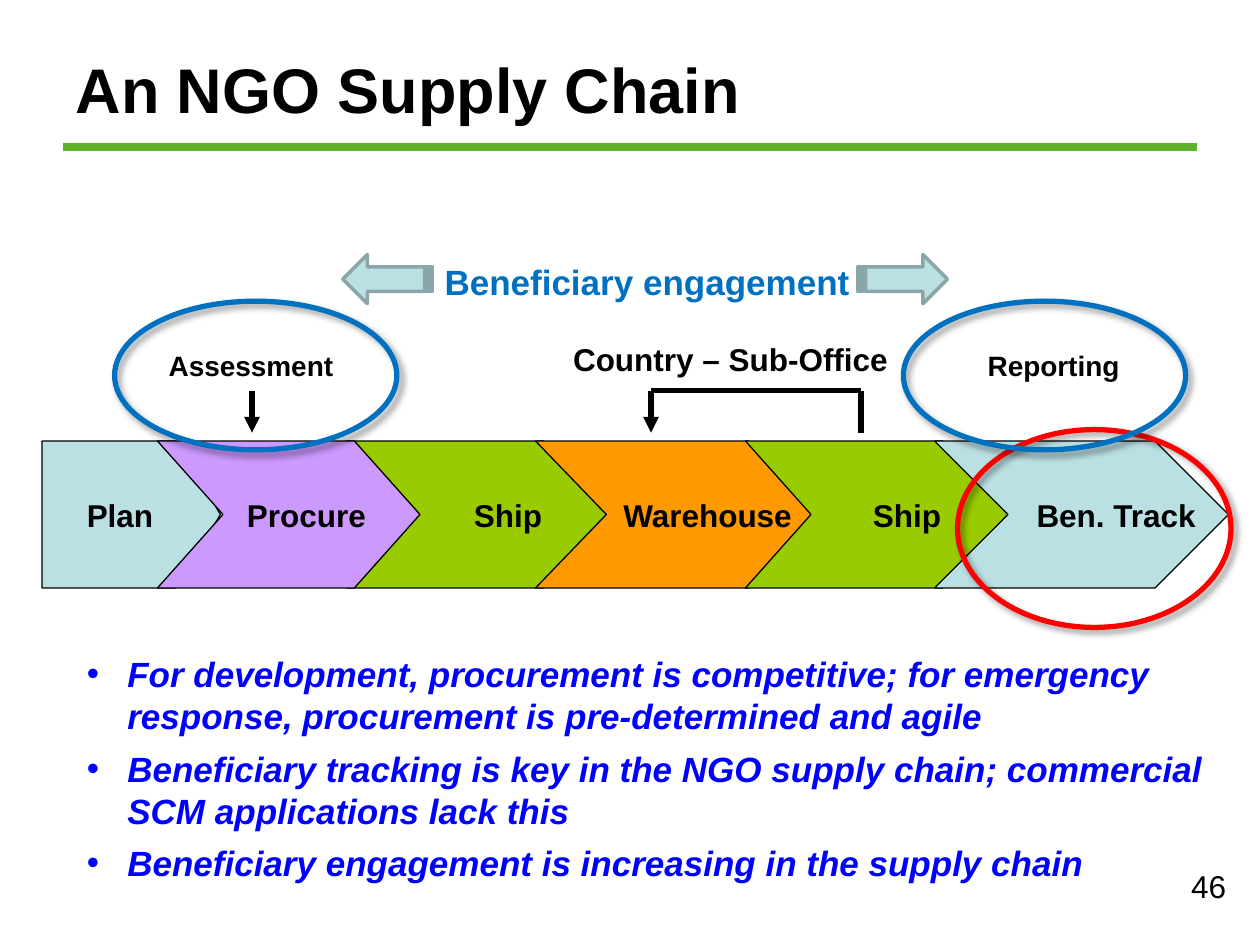
from lxml import etree
from pptx import Presentation
from pptx.dml.color import RGBColor
from pptx.enum.shapes import MSO_CONNECTOR, MSO_SHAPE
from pptx.enum.text import MSO_ANCHOR, MSO_AUTO_SIZE, PP_ALIGN
from pptx.oxml import parse_xml
from pptx.oxml.ns import nsdecls, qn
from pptx.util import Inches, Pt

STRAIGHT = MSO_CONNECTOR.STRAIGHT
CHEVRON, PENTAGON = MSO_SHAPE.CHEVRON, MSO_SHAPE.PENTAGON
OVAL, STRIPED_ARROW = MSO_SHAPE.OVAL, MSO_SHAPE.STRIPED_RIGHT_ARROW
TOP, MIDDLE = MSO_ANCHOR.TOP, MSO_ANCHOR.MIDDLE
LEFT, CENTER, RIGHT = PP_ALIGN.LEFT, PP_ALIGN.CENTER, PP_ALIGN.RIGHT
NO_AUTOFIT = MSO_AUTO_SIZE.NONE

COLORS = {name: RGBColor.from_string(value) for name, value in {
    "black": "000000", "rule": "5FB12B", "list": "0000FF", "blue": "0070C0",
    "red": "FF0000", "pale": "BBE0E3", "pale edge": "8AA6A8",
    "green": "99CC00", "orange": "FF9900", "purple": "CC99FF"}.items()}

presentation = Presentation()
presentation.slide_width, presentation.slide_height = Inches(10), Inches(7.5)
slide = presentation.slides.add_slide(presentation.slide_layouts[1])
column = presentation.slide_width / 120
row = presentation.slide_height / 90


def write(paragraph, text, size, color="black", bold=True, italic=False, align=LEFT):
    paragraph.alignment = align
    run = paragraph.add_run()
    run.text = text
    run.font.name, run.font.size = "Arial", Pt(size)
    run.font.bold, run.font.italic = bold, italic
    run.font.color.rgb = COLORS[color]


def draw_line(start, end, color, width, arrow_at_start=False):
    points = [round(value) for x, y in (start, end) for value in (x * column, y * row)]
    connector = slide.shapes.add_connector(STRAIGHT, *points)
    connector.line.color.rgb = COLORS[color]
    connector.line.width = Pt(width)
    if arrow_at_start:
        line = connector.line._get_or_add_ln()
        etree.SubElement(line, qn("a:headEnd"), type="triangle")
    etree.SubElement(connector._element.spPr, qn("a:effectLst"))


# Title and green rule
draw_line((6, 14), (114, 14), "rule", 4.5)
title = slide.shapes.title
title.left, title.top, title.width, title.height = (
    Inches(0.5), Inches(0.08), Inches(7.5), Inches(1.25))
title.text_frame.auto_size = NO_AUTOFIT
title.text_frame.vertical_anchor = MIDDLE
write(title.text_frame.paragraphs[0], "An NGO Supply Chain", 36)

# Key points
body = slide.placeholders[1]
body.left, body.top, body.width, body.height = (
    Inches(0.59), Inches(5.13), Inches(9.19), Inches(2.32))
body.text_frame.auto_size = NO_AUTOFIT
body.text_frame.vertical_anchor = TOP
points = [
    "For development, procurement is competitive; for emergency response, "
    "procurement is pre-determined and agile",
    "Beneficiary tracking is key in the NGO supply chain; commercial SCM "
    "applications lack this",
    "Beneficiary engagement is increasing in the supply chain",
]
for index, point in enumerate(points):
    paragraph = body.text_frame.paragraphs[0] if index == 0 else body.text_frame.add_paragraph()
    paragraph.space_before = Pt(6)
    write(paragraph, point, 20, "list", italic=True)
    properties = paragraph._p.get_or_add_pPr()
    properties.set("marL", str(Inches(0.32)))
    properties.set("indent", str(-Inches(0.32)))
    etree.SubElement(properties, qn("a:buFont"), typeface="Arial")
    etree.SubElement(properties, qn("a:buChar"), char="•")

# Chain steps: text, first column, columns wide, point depth, fill, left inset
steps = [
    ("Plan", 4, 17, 0.304, "pale", 0.1),
    ("Ship", 33, 25, 0.446, "green", 0.58),
    ("Warehouse", 51, 27, 0.482, "orange", 0.58),
    ("Ship", 71, 25, 0.446, "green", 0.58),
    ("Ben. Track", 89, 28, 0.5, "pale", 0.65),
    ("Procure", 15, 25, 0.446, "purple", 0.38),
]
for text, first, wide, depth, fill, inset in steps:
    step = slide.shapes.add_shape(PENTAGON if text == "Plan" else CHEVRON, round(first * column),
                                  round(42 * row), round(wide * column), round(14 * row))
    step.adjustments[0] = depth
    step.shadow.inherit = False
    step.fill.solid()
    step.fill.fore_color.rgb = COLORS[fill]
    step.line.color.rgb = COLORS["black"]
    step.line.width = Pt(0.75)
    frame = step.text_frame
    frame.word_wrap = False
    frame.vertical_anchor = MIDDLE
    frame.margin_left = Inches(inset)
    write(frame.paragraphs[0], text, 18, align=CENTER)

# Bracket over the country offices, and the assessment arrow
draw_line((82, 41.2), (82, 37.2), "black", 3)
draw_line((82, 37.2), (62, 37.2), "black", 3)
for x in (62, 24):
    draw_line((x, 41.2), (x, 37.2), "black", 3, arrow_at_start=True)

# Labels and page number: text, box, size, colour, bold, alignment
labels = [
    ("Country – Sub-Office", (4.45, 2.65, 2.73, 0.4), 18, "black", True, LEFT),
    ("Assessment", (1.24, 2.72, 1.51, 0.37), 16, "black", True, LEFT),
    ("Reporting", (7.74, 2.72, 1.25, 0.37), 16, "black", True, LEFT),
    ("Beneficiary engagement", (3.43, 2.02, 3.44, 0.44), 20, "blue", True, LEFT),
    ("46", (8.5, 6.83, 1.33, 0.52), 18, "black", False, RIGHT),
]
for text, box, size, color, bold, align in labels:
    label = slide.shapes.add_textbox(*map(Inches, box))
    label.text_frame.word_wrap = align == RIGHT
    write(label.text_frame.paragraphs[0], text, size, color, bold, align=align)

# Highlight rings with soft shadows
rings = [("red", (7.6, 3.41, 2.17, 1.57)),
         ("blue", (0.91, 2.39, 2.24, 1.18)),
         ("blue", (7.17, 2.39, 2.24, 1.18))]
for color, box in rings:
    ring = slide.shapes.add_shape(OVAL, *map(Inches, box))
    ring.fill.background()
    ring.line.color.rgb = COLORS[color]
    ring.line.width = Pt(3)
    ring._element.spPr.append(parse_xml(
        f'<a:effectLst {nsdecls("a")}><a:outerShdw blurRad="{Pt(4)}" dist="{Pt(3)}" '
        'dir="2700000" algn="tl" rotWithShape="0"><a:srgbClr val="000000">'
        '<a:alpha val="40000"/></a:srgbClr></a:outerShdw></a:effectLst>'))

# Engagement arrows on both sides of the label
for left, rotation in ((6.81, 0), (2.72, 180)):
    arrow = slide.shapes.add_shape(STRIPED_ARROW, *map(Inches, (left, 2.02, 0.71, 0.39)))
    arrow.rotation = rotation
    arrow.shadow.inherit = False
    arrow.fill.solid()
    arrow.fill.fore_color.rgb = COLORS["pale"]
    arrow.line.color.rgb = COLORS["pale edge"]
    arrow.line.width = Pt(2)

presentation.save("out.pptx")
